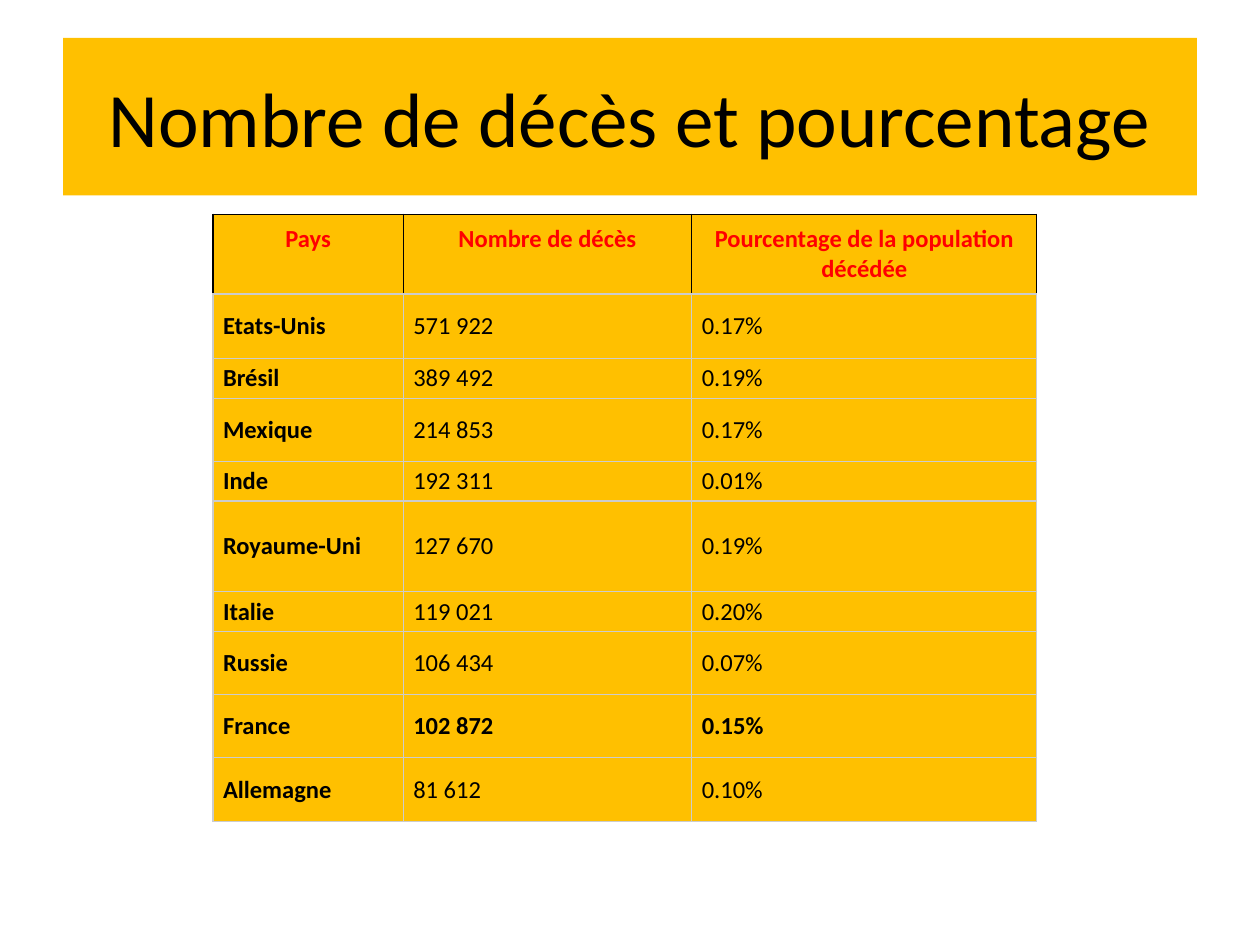
import pptx
import pptx.dml.color
import pptx.enum.text
import pptx.oxml
import pptx.oxml.ns
import pptx.util

Inches = pptx.util.Inches
COLORS = {"gold": "FFC000", "black": "000000", "red": "FF0000", "grey": "CCCCCC"}
FONT = "Calibri"
HEADERS = ["Pays", "Nombre de décès", "Pourcentage de la population décédée"]
COUNTRIES = [
    ("Etats-Unis", "571 922", "0.17%"),
    ("Brésil", "389 492", "0.19%"),
    ("Mexique", "214 853", "0.17%"),
    ("Inde", "192 311", "0.01%"),
    ("Royaume-Uni", "127 670", "0.19%"),
    ("Italie", "119 021", "0.20%"),
    ("Russie", "106 434", "0.07%"),
    ("France", "102 872", "0.15%"),
    ("Allemagne", "81 612", "0.10%"),
]
HIGHLIGHTED = "France"
COLUMN_WIDTHS = [1.51, 2.29, 2.74]
ROW_HEIGHTS = [0.59, 0.51, 0.29, 0.5, 0.29, 0.72, 0.29, 0.5, 0.5, 0.51]


def rgb(name):
    """Return the named palette colour."""
    return pptx.dml.color.RGBColor.from_string(COLORS[name])


def fill_gold(target):
    """Give a shape or cell the solid gold fill."""
    target.fill.solid()
    target.fill.fore_color.rgb = rgb("gold")


def format_text(frame, size, color, bold, alignment):
    """Format every paragraph and run of a text frame."""
    for para in frame.paragraphs:
        para.alignment = alignment
        for span in para.runs:
            span.font.name = FONT
            span.font.size = pptx.util.Pt(size)
            span.font.bold = bold
            span.font.color.rgb = rgb(color)


def set_borders(cell, sides):
    """Draw thin cell borders from (side, colour) pairs in schema order."""
    properties = cell._tc.get_or_add_tcPr()
    for index, (side, color) in enumerate(sides):
        line = pptx.oxml.parse_xml(
            f'<a:ln{side} {pptx.oxml.ns.nsdecls("a")} w="{pptx.util.Pt(0.75)}">'
            f'<a:solidFill><a:srgbClr val="{COLORS[color]}"/></a:solidFill></a:ln{side}>'
        )
        properties.insert(index, line)


def add_title(page, left, top, width, height):
    """Place the gold title band in the given box."""
    title = page.shapes.title
    title.left, title.top, title.width, title.height = map(Inches, (left, top, width, height))
    fill_gold(title)
    title.text_frame.text = "Nombre de décès et pourcentage"
    title.text_frame.vertical_anchor = pptx.enum.text.MSO_ANCHOR.MIDDLE
    format_text(title.text_frame, 44, "black", False, pptx.enum.text.PP_ALIGN.CENTER)


def format_cell(cell, text, is_header, bold):
    """Write and style one table cell."""
    cell.text_frame.text = text
    cell.margin_left = cell.margin_right = Inches(0.08)
    cell.margin_top = cell.margin_bottom = Inches(0.08 if is_header else 0.04)
    anchors, alignments = pptx.enum.text.MSO_ANCHOR, pptx.enum.text.PP_ALIGN
    cell.vertical_anchor = anchors.TOP if is_header else anchors.MIDDLE
    format_text(cell.text_frame, 14, "red" if is_header else "black", bold,
                alignments.CENTER if is_header else alignments.LEFT)
    fill_gold(cell)
    edge = "black" if is_header else "grey"
    set_borders(cell, [("L", edge), ("R", edge), ("T", edge), ("B", "grey")])


def add_deaths_table(page, left, top, width, height):
    """Place the table of deaths by country in the given box."""
    records = [HEADERS, *COUNTRIES]
    frame = page.shapes.add_table(len(records), len(HEADERS),
                                  *map(Inches, (left, top, width, height)))
    table = frame.table
    table.horz_banding = False
    for column, column_width in zip(table.columns, COLUMN_WIDTHS):
        column.width = Inches(column_width)
    for row, row_height in zip(table.rows, ROW_HEIGHTS):
        row.height = Inches(row_height)
    for row_index, record in enumerate(records):
        is_header = row_index == 0
        for column_index, text in enumerate(record):
            bold = is_header or column_index == 0 or record[0] == HIGHLIGHTED
            format_cell(table.cell(row_index, column_index), text, is_header, bold)


def main():
    """Build and save the deck."""
    deck = pptx.Presentation()
    deck.slide_width, deck.slide_height = Inches(10), Inches(7.5)
    page = deck.slides.add_slide(deck.slide_layouts.get_by_name("Title Only"))
    add_title(page, 0.5, 0.3, 9, 1.25)
    add_deaths_table(page, 1.69, 1.7, sum(COLUMN_WIDTHS), sum(ROW_HEIGHTS))
    deck.save("out.pptx")


if __name__ == "__main__":
    main()
